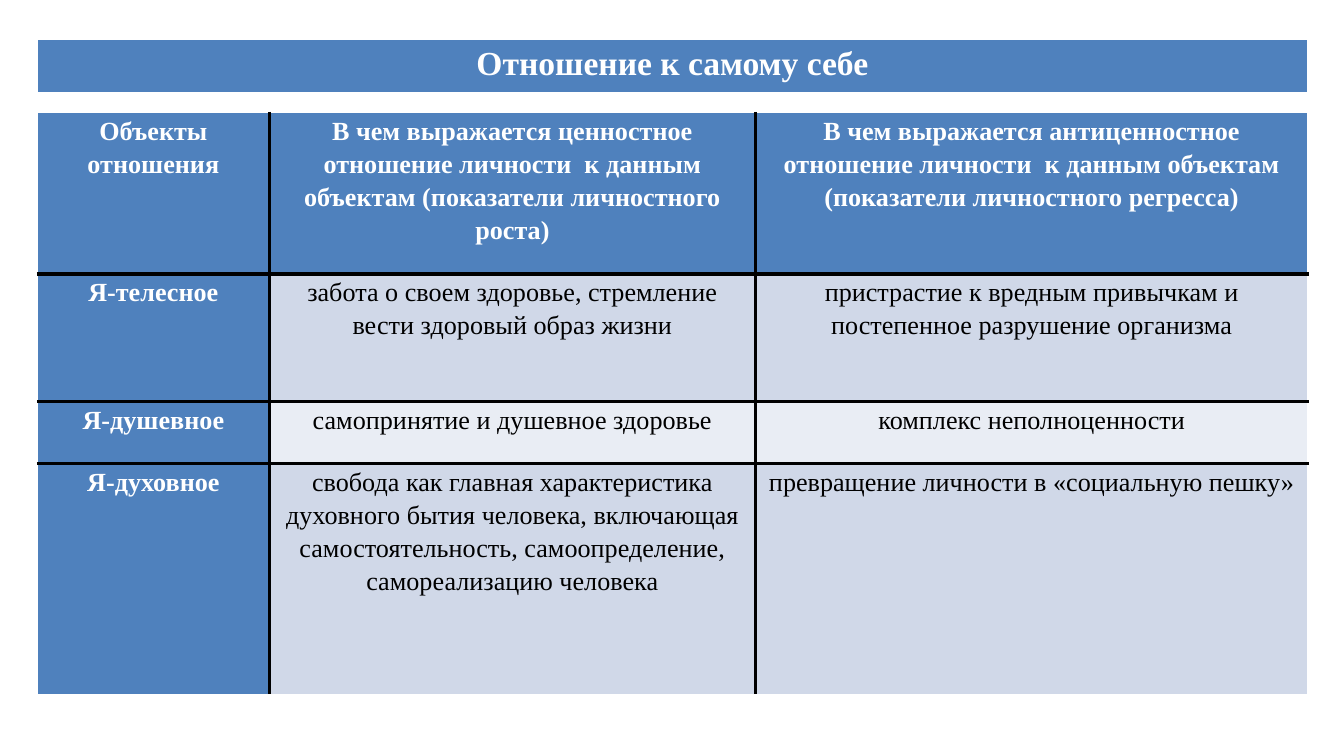
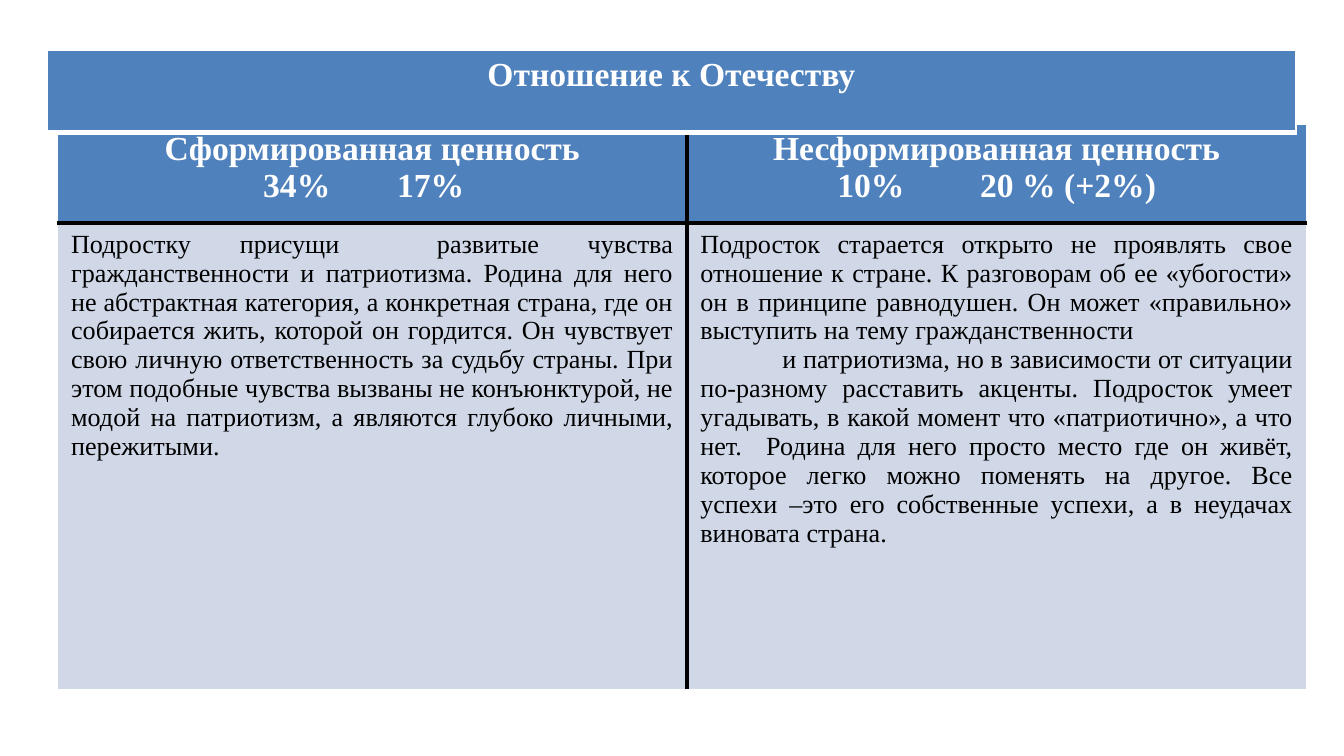
from lxml import etree
from pptx import Presentation
from pptx.dml.color import RGBColor
from pptx.enum import text
from pptx.oxml import ns
from pptx.util import Cm, Pt

WHITE = RGBColor(0xFF, 0xFF, 0xFF)
BLACK = RGBColor(0x00, 0x00, 0x00)
BLUE = RGBColor(0x4F, 0x81, 0xBD)
BAND_DARK = RGBColor(0xD0, 0xD8, 0xE8)
BAND_LIGHT = RGBColor(0xE9, 0xED, 0xF4)
FONT = "Times New Roman"
CENTER = text.PP_ALIGN.CENTER
JUSTIFY = text.PP_ALIGN.JUSTIFY
OUTER = (WHITE, 1)
INNER = (BLACK, 2.25)
TITLE_BOTTOM = (WHITE, 3)

SELF_ROWS = [
    ["Объекты\nотношения",
     "В чем выражается ценностное отношение личности  к данным объектам "
     "(показатели личностного роста)",
     "В чем выражается антиценностное отношение личности  к данным объектам "
     "(показатели личностного регресса)"],
    ["Я-телесное",
     "забота о своем здоровье, стремление вести здоровый образ жизни",
     "пристрастие к вредным привычкам и постепенное разрушение организма"],
    ["Я-душевное",
     "самопринятие и душевное здоровье",
     "комплекс неполноценности"],
    ["Я-духовное",
     "свобода как главная характеристика духовного бытия человека, включающая "
     "самостоятельность, самоопределение, самореализацию человека",
     "превращение личности в «социальную пешку»"],
]
HOMELAND_ROWS = [
    ["Сформированная ценность\n\t34%\t17%",
     "Несформированная ценность\n\t10%\t20 % (+2%)"],
    ["Подростку присущи  развитые чувства гражданственности и патриотизма. "
     "Родина для него не абстрактная категория, а конкретная страна, где он "
     "собирается жить, которой он гордится. Он чувствует свою личную "
     "ответственность за судьбу страны. При этом подобные чувства вызваны не "
     "конъюнктурой, не модой на патриотизм, а являются глубоко личными, пережитыми.",
     "Подросток старается открыто не проявлять свое отношение к стране. "
     "К разговорам об ее «убогости» он в принципе равнодушен. Он может "
     "«правильно» выступить на тему гражданственности\n"
     "\tи патриотизма, но в зависимости от ситуации по-разному расставить "
     "акценты. Подросток умеет угадывать, в какой момент что «патриотично», "
     "а что нет.  Родина для него просто место где он живёт, которое легко "
     "можно поменять на другое. Все успехи –это его собственные успехи, "
     "а в неудачах виновата страна."],
]
HOMELAND_STOPS = {(0, 0): (3.63, 6.16), (0, 1): (2.59, 5.29), (1, 1): (1.55,)}


def set_border(cell, side, color, width):
    """Draw one side of a cell."""
    line = etree.SubElement(cell._tc.get_or_add_tcPr(), ns.qn(f"a:ln{side}"), w=str(Pt(width)))
    fill = etree.SubElement(line, ns.qn("a:solidFill"))
    etree.SubElement(fill, ns.qn("a:srgbClr"), val=str(color))


def set_tab_stops(para, stops):
    """Give a paragraph left tab stops, in centimetres."""
    tabs = etree.SubElement(para._p.get_or_add_pPr(), ns.qn("a:tabLst"))
    for stop in stops:
        etree.SubElement(tabs, ns.qn("a:tab"), pos=str(Cm(stop)), algn="l")


def write_cell(cell, content, size, color, bold, align, spacing=None, stops=()):
    """Write the paragraphs of a cell and format their runs."""
    cell.text_frame.text = content
    for para in cell.text_frame.paragraphs:
        tabbed = para.text.startswith("\t")
        if tabbed:
            set_tab_stops(para, stops)
        para.alignment = text.PP_ALIGN.LEFT if tabbed and align == CENTER else align
        if spacing:
            para.line_spacing = spacing
        for span in para.runs:
            span.font.name = FONT
            span.font.size = Pt(size)
            span.font.bold = bold
            span.font.color.rgb = color


def add_grid(page, left, top, widths, heights, bottom=OUTER):
    """Add a plain table whose inner rules are black and outer edges white."""
    frame = page.shapes.add_table(len(heights), len(widths), Cm(left), Cm(top),
                                  Cm(sum(widths)), Cm(sum(heights)))
    table = frame.table
    table.first_row = table.horz_banding = False
    for column, width in zip(table.columns, widths):
        column.width = Cm(width)
    for row, height in zip(table.rows, heights):
        row.height = Cm(height)
    last_row, last_col = len(heights) - 1, len(widths) - 1
    for r in range(len(heights)):
        for c in range(len(widths)):
            edges = {"L": INNER if c else OUTER,
                     "R": INNER if c < last_col else OUTER,
                     "T": INNER if r else OUTER,
                     "B": INNER if r < last_row else bottom}
            for side, (color, width) in edges.items():
                set_border(table.cell(r, c), side, color, width)
    return table


def fill_cell(cell, color):
    """Fill a cell with one colour."""
    cell.fill.solid()
    cell.fill.fore_color.rgb = color


def add_title(page, left, top, width, height, title):
    """Add the blue title band."""
    cell = add_grid(page, left, top, [width], [height], TITLE_BOTTOM).cell(0, 0)
    fill_cell(cell, BLUE)
    write_cell(cell, title, 18, WHITE, True, CENTER)


def add_values(page, left, top, widths, heights, rows, head_size=14, label_column=False,
               align=CENTER, spacing=None, insets=None, stops=None):
    """Add a table with a blue header, optional blue labels and banded rows."""
    table = add_grid(page, left, top, widths, heights)
    for r, row in enumerate(rows):
        for c, content in enumerate(row):
            cell = table.cell(r, c)
            head = r == 0 or (label_column and c == 0)
            fill_cell(cell, BLUE if head else BAND_DARK if r % 2 else BAND_LIGHT)
            if insets:
                cell.margin_left = cell.margin_right = Cm(insets[0])
                cell.margin_top = cell.margin_bottom = Cm(insets[1])
            write_cell(cell, content, head_size if head else 14, WHITE if head else BLACK,
                       head, CENTER if head else align, spacing, (stops or {}).get((r, c), ()))


def build_self_slide(page):
    """Build the slide on the attitude to oneself."""
    add_values(page, 0.71, 2.13, [4.38, 9.19, 10.44], [3.05, 2.41, 1.17, 4.37], SELF_ROWS,
               label_column=True, spacing=1.15, insets=(0.18, 0))
    add_title(page, 0.71, 0.74, 24, 1.04, "Отношение к самому себе")


def build_homeland_slide(page):
    """Build the slide on the attitude to the homeland."""
    add_values(page, 1.09, 2.34, [11.89, 11.71], [1.88, 8.81], HOMELAND_ROWS,
               head_size=18, align=JUSTIFY, stops=HOMELAND_STOPS)
    add_title(page, 0.89, 0.94, 23.6, 1.57, "Отношение к Отечеству")


def main():
    """Build and save the deck."""
    deck = Presentation()
    deck.slide_width, deck.slide_height = Cm(25.4), Cm(14.29)
    for build in (build_self_slide, build_homeland_slide):
        build(deck.slides.add_slide(deck.slide_layouts[6]))
    deck.save("out.pptx")


if __name__ == "__main__":
    main()
